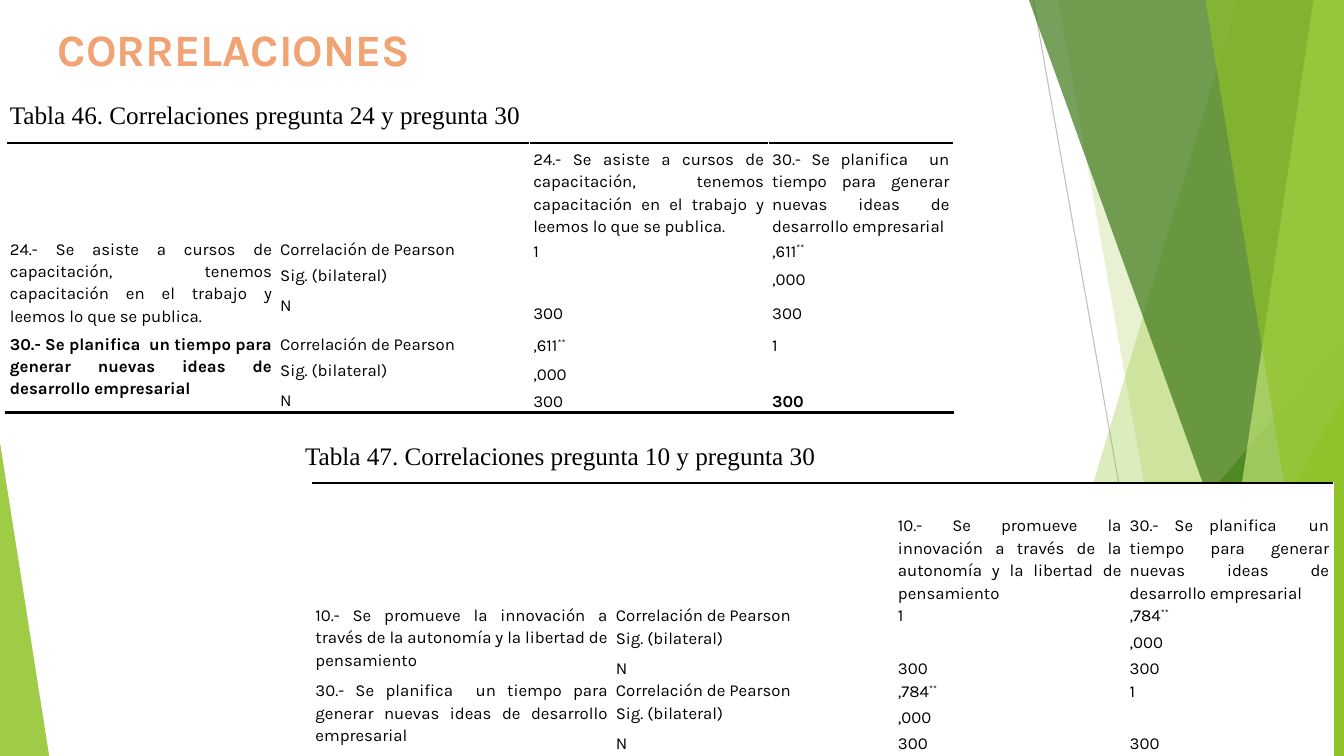
import pptx
import pptx.util
import pptx.dml.color
import pptx.enum.shapes
import pptx.enum.text
import pptx.oxml
import pptx.oxml.ns

Cm = pptx.util.Cm
Pt = pptx.util.Pt
ALIGN = pptx.enum.text.PP_ALIGN
ANCHOR = pptx.enum.text.MSO_ANCHOR
COLORS = {
    "lime": "90C226", "green": "54A021", "forest": "3F7819", "pale": "C0E474",
    "line": "BFBFBF", "faint": "D9D9D9", "title": "F1A374",
    "ink": "000000", "paper": "FFFFFF",
}
FONTS = {
    "title": {"name": "Karla", "size": Pt(32), "bold": True},
    "caption": {"name": "Times New Roman", "size": Pt(18)},
    "cell": {"name": "Karla", "size": Pt(12)},
}
CELL = {"margin_left": Cm(0.1), "margin_right": Cm(0.1), "margin_top": 0, "margin_bottom": 0}
PLAIN_TABLE = {"first_row": False, "horz_banding": False}
LEARNING = ("24.- Se asiste a cursos de capacitación, tenemos capacitación "
            "en el trabajo y leemos lo que se publica.")
AUTONOMY = ("10.- Se promueve la innovación a través de la autonomía "
            "y la libertad de pensamiento")
PLANNING = ("30.- Se planifica  un tiempo para generar nuevas ideas "
            "de desarrollo empresarial")


def apply(target, values):
    for name, value in values.items():
        setattr(target, name, value)


def rgb(name):
    return pptx.dml.color.RGBColor.from_string(COLORS[name])


def element(tag, body="", attrs=""):
    return pptx.oxml.parse_xml(
        f'<a:{tag} {pptx.oxml.ns.nsdecls("a")} {attrs}>{body}</a:{tag}>')


def paint(sp, color, opacity):
    sp.shadow.inherit = False
    sp.fill.solid()
    sp.fill.fore_color.rgb = rgb(color)
    sp.line.fill.background()
    clr = sp._element.spPr.find(".//" + pptx.oxml.ns.qn("a:srgbClr"))
    clr.append(element("alpha", attrs=f'val="{opacity * 1000}"'))


def add_line(s, color, x1, y1, x2, y2):
    ln = s.shapes.add_connector(
        pptx.enum.shapes.MSO_CONNECTOR.STRAIGHT, Cm(x1), Cm(y1), Cm(x2), Cm(y2))
    ln.line.color.rgb = rgb(color)
    ln.line.width = Pt(0.75)
    ln._element.spPr.append(element("effectLst"))


def add_triangle(s, color, opacity, x, y, w, h, apex):
    sp = s.shapes.add_shape(
        pptx.enum.shapes.MSO_SHAPE.ISOSCELES_TRIANGLE, Cm(x), Cm(y), Cm(w), Cm(h))
    sp.adjustments[0] = apex
    paint(sp, color, opacity)


def add_facet(s, box, color, opacity, top, bottom):
    x, y, w, h = box
    fb = s.shapes.build_freeform(Cm(x + top), Cm(y))
    fb.add_line_segments(
        [(Cm(x + w), Cm(y)), (Cm(x + w), Cm(y + h)), (Cm(x + bottom), Cm(y + h))], close=True)
    paint(fb.convert_to_shape(), color, opacity)


def right_facets(s, box):
    x, y, w, h = box
    add_line(s, "line", x + 1.24, y, x + 4.61, y + h)
    add_line(s, "faint", x + w, y + 10.24, x - 4.18, y + h)
    add_facet(s, box, "lime", 30, 6.39, 0.7)
    add_facet(s, box, "lime", 20, 1.87, 5.25)
    add_triangle(s, "green", 72, x + w - 9.04, y + h - 10.59, 9.04, 10.59, 1)
    add_facet(s, box, "forest", 70, 1.13, 7.99)
    add_facet(s, box, "pale", 70, 8.3, 5.48)
    add_facet(s, box, "lime", 65, 5.58, 8.68)
    add_triangle(s, "lime", 80, x + w - 5.05, y + h - 9.07, 5.05, 9.07, 1)


def left_facet(s, box):
    add_triangle(s, "lime", 85, *box, 0)


def label(s, box, text, style, color, align, wrap):
    sp = s.shapes.add_textbox(*map(Cm, box))
    tf = sp.text_frame
    tf.word_wrap = wrap
    p = tf.paragraphs[0]
    p.alignment = align
    r = p.add_run()
    r.text = text
    apply(r.font, FONTS[style])
    r.font.color.rgb = rgb(color)


def write_cell(cell, text, anchor, bold):
    apply(cell, CELL)
    cell.vertical_anchor = anchor
    cell.fill.solid()
    cell.fill.fore_color.rgb = rgb("paper")
    p = cell.text_frame.paragraphs[0]
    apply(p, {"alignment": ALIGN.JUSTIFY, "line_spacing": Pt(16)})
    number, stars, _ = text.partition("**")
    for part in filter(None, (number, stars)):
        r = p.add_run()
        r.text = part
        apply(r.font, {**FONTS["cell"], "bold": bold})
        r.font.color.rgb = rgb("ink")
        if part == "**":
            r._r.get_or_add_rPr().set("baseline", "30000")


def rule_cell(cell, tag):
    fill = f'<a:solidFill><a:srgbClr val="{COLORS["ink"]}"/></a:solidFill>'
    cell._tc.get_or_add_tcPr().insert(0, element(tag, fill, f'w="{Pt(2)}"'))


def correlation_rows(first, second, value):
    return [
        ["", "", first, second],
        [first, "Correlación de Pearson", "1", value],
        ["", "Sig. (bilateral)", "", ",000"],
        ["", "N", "300", "300"],
        [second, "Correlación de Pearson", value, "1"],
        ["", "Sig. (bilateral)", ",000", ""],
        ["", "N", "300", "300"],
    ]


def correlation_table(s, box, rows, widths, heights, header, bold=()):
    last = len(rows) - 1
    x, y = box
    tb = s.shapes.add_table(len(rows), len(widths), Cm(x), Cm(y),
                            Cm(sum(widths)), Cm(sum(heights))).table
    apply(tb, PLAIN_TABLE)
    for column, width in zip(tb.columns, widths):
        column.width = Cm(width)
    for row, height in zip(tb.rows, heights):
        row.height = Cm(height)
    for i, row in enumerate(rows):
        for j, text in enumerate(row):
            anchor = (ANCHOR.BOTTOM if i == header and j > 1
                      else ANCHOR.MIDDLE if j > 1 else ANCHOR.TOP)
            write_cell(tb.cell(i, j), text, anchor, (i, j) in bold)
    tb.cell(header, 0).merge(tb.cell(header, 1))
    for top in (header + 1, header + 4):
        tb.cell(top, 0).merge(tb.cell(top + 2, 0))
    for i, row in enumerate(rows):
        if header and i in (0, last):
            tb.cell(i, 0).merge(tb.cell(i, 3))
        for j in range(len(row)):
            cell = tb.cell(i, j)
            if i == last or (cell.is_merge_origin and i + cell.span_height > last):
                rule_cell(cell, "lnB")
            if i == 0:
                rule_cell(cell, "lnT")


def main():
    prs = pptx.Presentation()
    prs.slide_width, prs.slide_height = Cm(33.87), Cm(19.05)
    s = prs.slides.add_slide(prs.slide_layouts[6])
    right_facets(s, (24.8, 0, 9.07, 19.05))
    left_facet(s, (0, 11.15, 1.24, 7.9))
    label(s, (0.69, 0.43, 10.44, 1.63), "CORRELACIONES", "title", "title", ALIGN.CENTER, True)
    correlation_table(
        s, (0.15, 3.61), correlation_rows(LEARNING, PLANNING, ",611**"),
        (6.81, 6.38, 6.02, 4.67), (2.36, 0.66, 0.66, 0.97, 0.66, 0.66, 0.61),
        0, {(4, 0), (6, 3)})
    label(s, (0, 2.39, 13.51, 1.02), "Tabla 46. Correlaciones pregunta 24 y pregunta 30",
          "caption", "ink", ALIGN.LEFT, False)
    blank = [""] * 4
    correlation_table(
        s, (7.85, 12.17), [blank, *correlation_rows(AUTONOMY, PLANNING, ",784**"), blank],
        (7.57, 7.11, 5.84, 5.23), (0.57, 2.27, *[0.57] * 6, 0.61), 1)
    label(s, (7.44, 10.97, 13.51, 1.02), "Tabla 47. Correlaciones pregunta 10 y pregunta 30",
          "caption", "ink", ALIGN.LEFT, False)
    prs.save("out.pptx")


if __name__ == "__main__":
    main()
